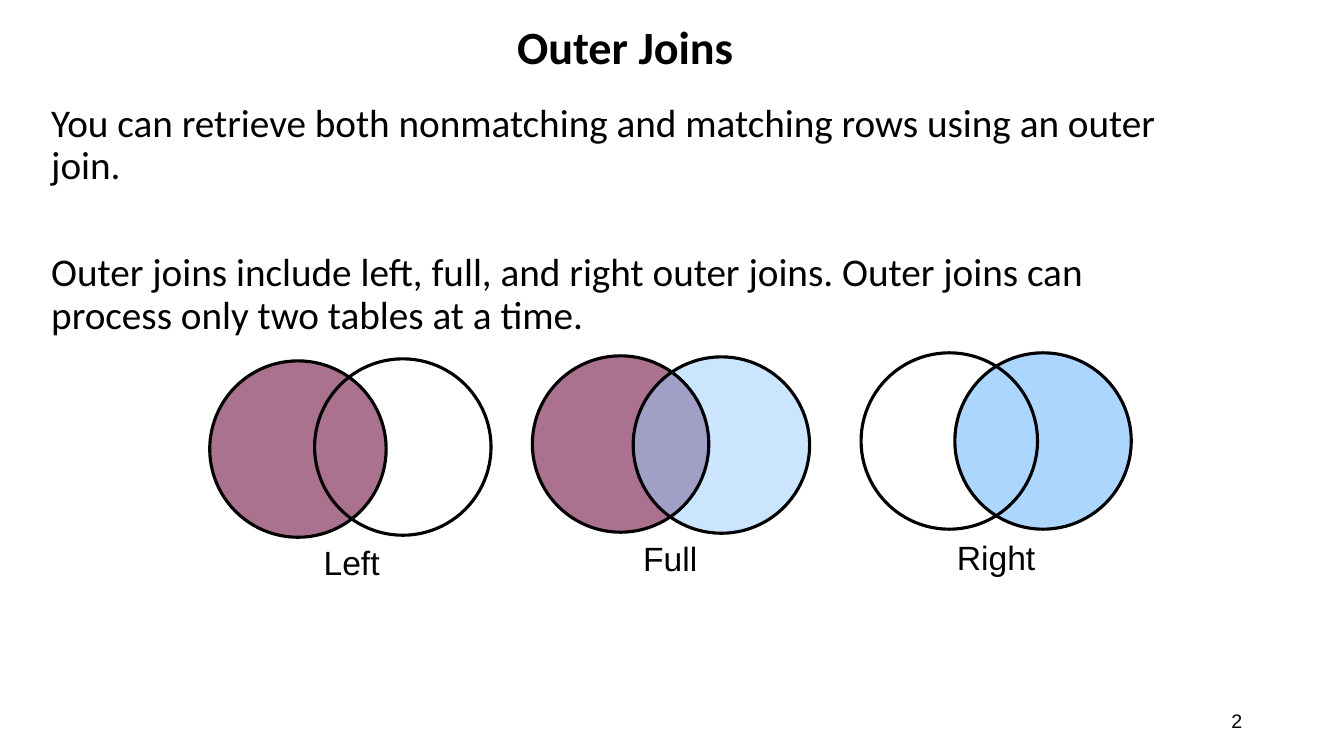
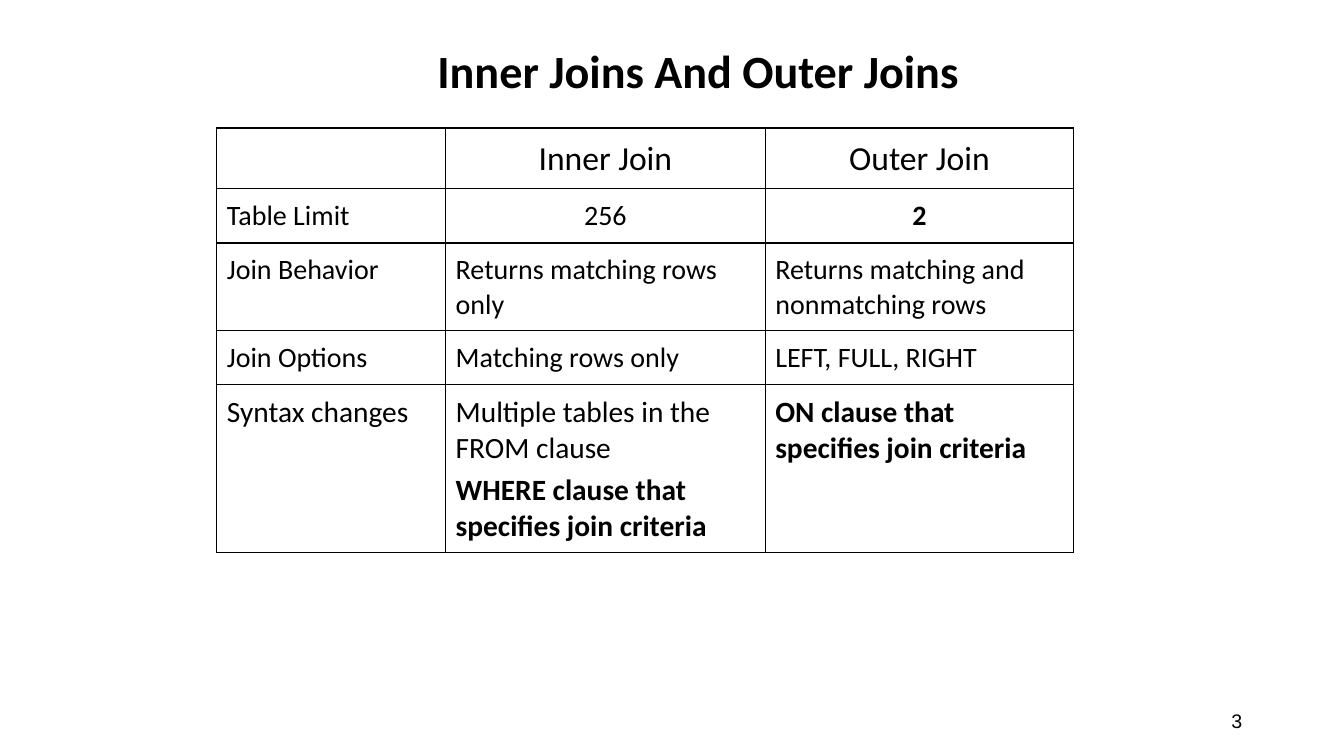
"""Build two slides that explain outer joins and compare them with inner joins."""
from lxml.etree import SubElement
from pptx import Presentation
from pptx.dml.color import RGBColor
from pptx.enum.shapes import MSO_SHAPE as Shape
from pptx.enum.text import MSO_ANCHOR as Anchor, PP_ALIGN as Align
from pptx.oxml.ns import qn
from pptx.util import Emu, Pt

PX = 9144
COLORS = {"ink": "000000", "plum": "954F72", "sky": "99CCFF"}

OUTER_TITLE = ("Outer Joins", (503, 0, 293, 98))
COMPARE_TITLE = ("Inner Joins And Outer Joins", (424, 0, 575, 145))
INTRO = [
    "You can retrieve both nonmatching and matching rows using an outer join.",
    "Outer joins include left, full, and right outer joins. "
    "Outer joins can process only two tables at a time.",
]

CIRCLE = 175
PLUM = ("plum", 80)
DIAGRAMS = [
    {"label": "Left", "label_box": (321, 538, 56, 40),
     "left": (208, 358), "right": (312, 356), "fills": (PLUM, None)},
    {"label": "Full", "label_box": (638, 534, 54, 40),
     "left": (528, 353), "right": (628, 354), "fills": (PLUM, ("sky", 50))},
    {"label": "Right", "label_box": (949, 533, 79, 40),
     "left": (854, 350), "right": (947, 350), "fills": (None, ("sky", 80))},
]

TABLE_BOX = (215, 127, 850, 421)
COLUMNS = [227, 317, 306]
ROWS = [
    {"height": 59, "size": 24, "centered": True,
     "cells": ["", "Inner Join", "Outer Join"]},
    {"height": 54, "size": 20, "centered": True,
     "cells": ["Table Limit", "256", "*2"]},
    {"height": 86, "size": 20,
     "cells": ["Join Behavior", "Returns matching rows only",
               "Returns matching and nonmatching rows"]},
    {"height": 54, "size": 20,
     "cells": ["Join Options", "Matching rows only", "LEFT, FULL, RIGHT"]},
    {"height": 166, "size": 21,
     "cells": ["Syntax changes",
               ["Multiple tables in the FROM clause",
                "*WHERE clause that specifies join criteria"],
               "*ON clause that specifies join criteria"]},
]


def px(values):
    return [Emu(value * PX) for value in values]


def color(name):
    return RGBColor.from_string(COLORS[name])


def write(frame, text, font="Calibri", size=20, bold=False, align=Align.LEFT,
          spacing=None, gap=0):
    """Fill a text frame with one paragraph per item; a leading * means bold."""
    for index, line in enumerate([text] if isinstance(text, str) else text):
        para = frame.add_paragraph() if index else frame.paragraphs[0]
        para.alignment = align
        para.line_spacing = spacing
        para.space_before = Pt(gap if index else 0)
        span = para.add_run()
        span.text = line.removeprefix("*")
        span.font.name = font
        span.font.size = Pt(size)
        span.font.bold = bold or line.startswith("*")
        span.font.color.rgb = color("ink")


def add_text(page, text, box, anchor=Anchor.TOP, wrap=True, inset=True, **style):
    frame = page.shapes.add_textbox(*px(box)).text_frame
    frame.word_wrap = wrap
    frame.vertical_anchor = anchor
    if not inset:
        frame.margin_left = frame.margin_right = 0
        frame.margin_top = frame.margin_bottom = 0
    write(frame, text, **style)


def add_page(deck, title, number):
    page = deck.slides.add_slide(deck.slide_layouts[6])
    text, box = title
    add_text(page, text, box, Anchor.MIDDLE, size=33, bold=True, spacing=0.9)
    add_text(page, str(number), (942, 695, 300, 40), Anchor.MIDDLE,
             font="Arial", size=14, align=Align.RIGHT)
    return page


def add_circle(page, corner, fill=None, outlined=True):
    circle = page.shapes.add_shape(Shape.OVAL, *px((*corner, CIRCLE, CIRCLE)))
    circle.shadow.inherit = False
    if fill:
        name, opacity = fill
        circle.fill.solid()
        circle.fill.fore_color.rgb = color(name)
        tint = circle.fill._xPr.find(f".//{qn('a:srgbClr')}")
        SubElement(tint, qn("a:alpha"), val=str(opacity * 1000))
    else:
        circle.fill.background()
    if outlined:
        circle.line.color.rgb = color("ink")
        circle.line.width = Pt(2.25)
    else:
        circle.line.fill.background()


def add_diagram(page, diagram):
    left_fill, right_fill = diagram["fills"]
    if left_fill:
        add_circle(page, diagram["left"], left_fill, outlined=False)
    add_circle(page, diagram["right"], right_fill)
    add_circle(page, diagram["left"])
    add_text(page, diagram["label"], diagram["label_box"], wrap=False,
             inset=False, font="Arial", size=24)


def add_borders(cell):
    properties = cell._tc.get_or_add_tcPr()
    for index, side in enumerate(("lnL", "lnR", "lnT", "lnB")):
        border = SubElement(properties, qn(f"a:{side}"), w=str(Pt(1)))
        fill = SubElement(border, qn("a:solidFill"))
        SubElement(fill, qn("a:srgbClr"), val=COLORS["ink"])
        properties.insert(index, border)


def add_comparison(page):
    table = page.shapes.add_table(len(ROWS), len(COLUMNS), *px(TABLE_BOX)).table
    table.first_row = table.horz_banding = False
    for column, width in zip(table.columns, px(COLUMNS)):
        column.width = width
    for row, content in zip(table.rows, ROWS):
        row.height = Emu(content["height"] * PX)
        for index, (cell, text) in enumerate(zip(row.cells, content["cells"])):
            cell.margin_left = cell.margin_right = Emu(10 * PX)
            cell.margin_top = cell.margin_bottom = Emu(10 * PX)
            cell.fill.background()
            add_borders(cell)
            if text:
                centered = index > 0 and content.get("centered")
                write(cell.text_frame, text, size=content["size"], gap=4.2,
                      align=Align.CENTER if centered else Align.LEFT)


def main():
    deck = Presentation()
    deck.slide_width, deck.slide_height = px((1333, 750))
    page = add_page(deck, OUTER_TITLE, 2)
    add_text(page, INTRO, (41, 98, 1150, 476), size=28, spacing=0.9, gap=46)
    for diagram in DIAGRAMS:
        add_diagram(page, diagram)
    add_comparison(add_page(deck, COMPARE_TITLE, 3))
    deck.save("out.pptx")


if __name__ == "__main__":
    main()
